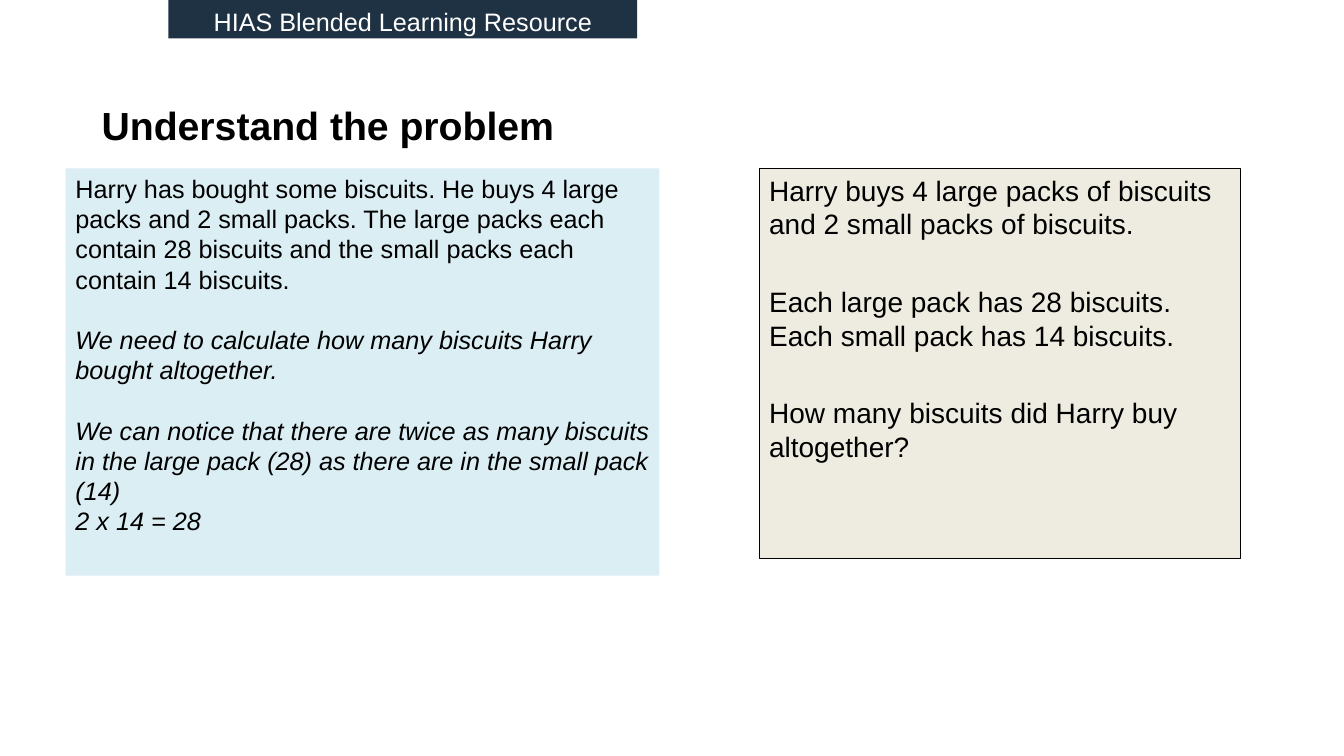
import pptx
import pptx.dml.color
import pptx.enum.shapes
import pptx.enum.text
import pptx.util

Inches = pptx.util.Inches
Pt = pptx.util.Pt
Align = pptx.enum.text.PP_ALIGN
Anchor = pptx.enum.text.MSO_ANCHOR


def colour(value):
    return pptx.dml.color.RGBColor.from_string(value)


class ProblemSlide:
    """Holds the slide and its text style, and adds headings and panels."""

    font = "Arial"
    ink = "000000"

    def __init__(self, slide):
        self.slide = slide

    def add_wording(self, frame, paragraphs, size, ink=ink, bold=False,
                    align=Align.LEFT, anchor=Anchor.TOP):
        frame.word_wrap = True
        frame.vertical_anchor = anchor
        for index, (text, italic, gap) in enumerate(paragraphs):
            paragraph = frame.paragraphs[0] if index == 0 else frame.add_paragraph()
            paragraph.alignment = align
            paragraph.space_before = Pt(gap)
            run = paragraph.add_run()
            run.text = text
            run.font.name = self.font
            run.font.size = Pt(size)
            run.font.bold = bold
            run.font.italic = italic
            run.font.color.rgb = colour(ink)

    def heading(self, box, text, size):
        heading = self.slide.shapes.add_textbox(*map(Inches, box))
        self.add_wording(heading.text_frame, [(text, False, 0)], size,
                         bold=True, anchor=Anchor.MIDDLE)

    def panel(self, box, fill, paragraphs, size, outline=None, **style):
        panel = self.slide.shapes.add_shape(
            pptx.enum.shapes.MSO_SHAPE.RECTANGLE, *map(Inches, box))
        panel.shadow.inherit = False
        panel.fill.solid()
        panel.fill.fore_color.rgb = colour(fill)
        if outline:
            panel.line.color.rgb = colour(outline)
            panel.line.width = Pt(0.75)
        else:
            panel.line.fill.background()
        self.add_wording(panel.text_frame, paragraphs, size, **style)
        return panel


def main():
    deck = pptx.Presentation()
    deck.slide_width = Inches(13.33)
    deck.slide_height = Inches(7.5)
    page = ProblemSlide(deck.slides.add_slide(deck.slide_layouts[6]))

    page.heading((0.91, 0.92, 9, 0.64), "Understand the problem", 28)

    page.panel((0.65, 1.67, 5.89, 4.04), "DBEEF4", [
        ("Harry has bought some biscuits. He buys 4 large packs and 2 small packs. "
         "The large packs each contain 28 biscuits and the small packs each "
         "contain 14 biscuits.", False, 0),
        ("We need to calculate how many biscuits Harry bought altogether.", True, 21.5),
        ("We can notice that there are twice as many biscuits in the large pack (28) "
         "as there are in the small pack (14)", True, 21.5),
        ("2 x 14 = 28", True, 0),
    ], 18)

    banner = page.panel((1.67, 0, 4.65, 0.38), "1F3244",
                        [("HIAS Blended Learning Resource", False, 0)], 18,
                        ink="FFFFFF", align=Align.CENTER, anchor=Anchor.MIDDLE)
    banner.text_frame.margin_bottom = Inches(0)

    page.panel((7.53, 1.67, 4.77, 3.87), "EEECE1", [
        ("Harry buys 4 large packs of biscuits and 2 small packs of biscuits.", False, 0),
        ("Each large pack has 28 biscuits. Each small pack has 14 biscuits.", False, 31.5),
        ("How many biscuits did Harry buy altogether?", False, 31.5),
    ], 20, outline=page.ink)

    deck.save("out.pptx")


if __name__ == "__main__":
    main()
